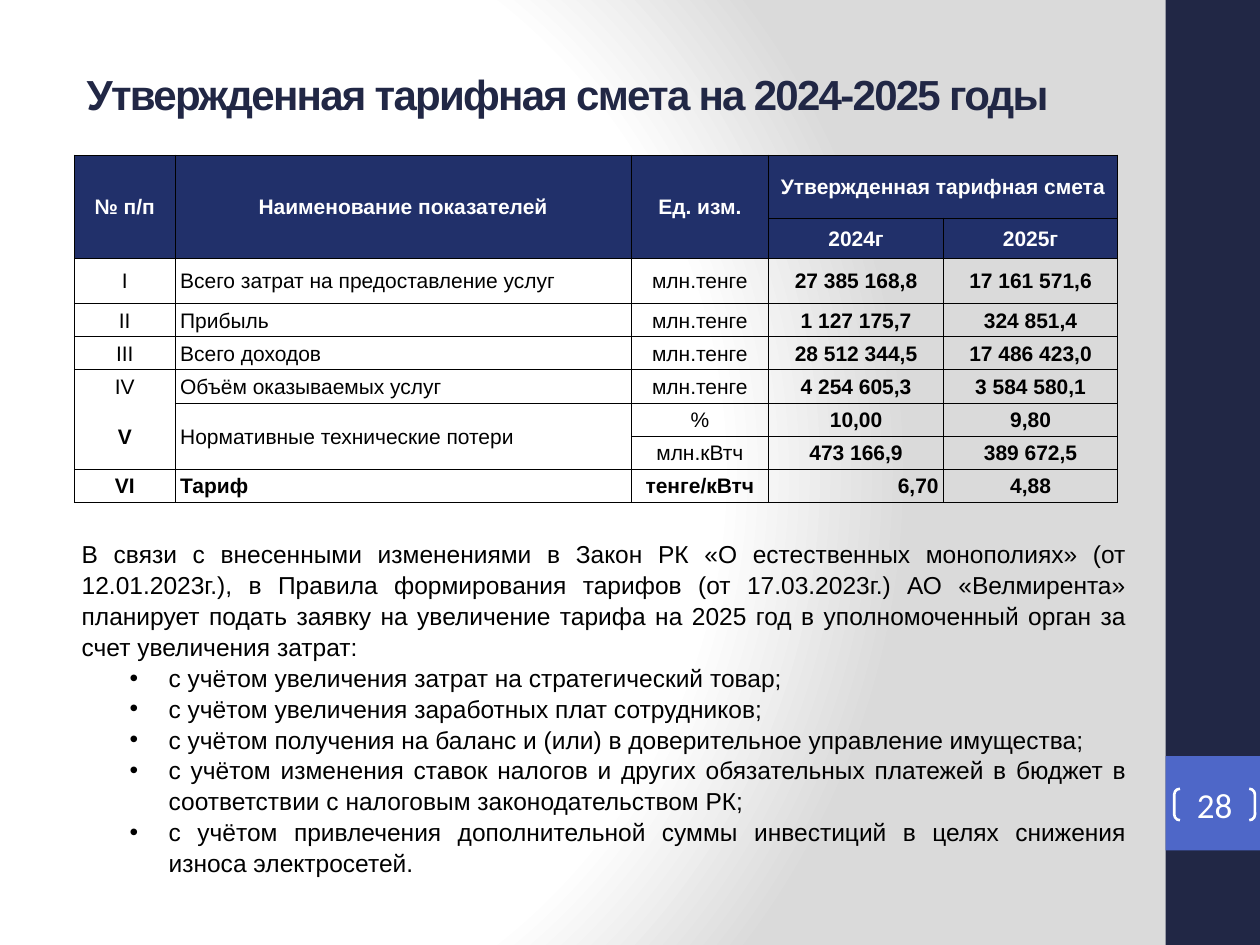
from dataclasses import dataclass

from pptx import Presentation
from pptx import util as u
from pptx.dml.color import RGBColor
from pptx.enum import shapes, text
from pptx.oxml import parse_xml
from pptx.oxml.ns import nsdecls

MID, TOP = text.MSO_ANCHOR.MIDDLE, text.MSO_ANCHOR.TOP
LEFT, RIGHT = text.PP_ALIGN.LEFT, text.PP_ALIGN.RIGHT
MIDST, FULL = text.PP_ALIGN.CENTER, text.PP_ALIGN.JUSTIFY


@dataclass(frozen=True)
class Theme:
    font: str = "Arial"
    page_font: str = "Calibri"
    navy: str = "212745"
    blue: str = "4E67C8"
    head: str = "21306A"
    white: str = "FFFFFF"
    black: str = "000000"
    gray: str = "DADADA"
    title: float = 24
    body: float = 14
    cell: float = 12
    page: float = 20
    rule: float = 0.5


@dataclass(frozen=True)
class Box:
    x: float
    y: float
    w: float
    h: float

    def lens(self):
        return [u.Inches(v) for v in (self.x, self.y, self.w, self.h)]


@dataclass(frozen=True)
class Row:
    no: str
    name: str
    unit: str
    old: str
    new: str
    bold: str = "old new"

    def cells(self):
        return [(key, getattr(self, key)) for key in ("no", "name", "unit", "old", "new")]


T = Theme()
COLS = (0.8, 3.62, 1.09, 1.39, 1.38)
HIGH = (0.5, 0.32, 0.36) + (1.58 / 6,) * 6
HEADS = (
    Row("№ п/п", "Наименование показателей", "Ед. изм.", "Утвержденная тарифная смета", ""),
    Row("", "", "", "2024г", "2025г"),
)
ROWS = (
    Row("I", "Всего затрат на предоставление услуг", "млн.тенге", "27 385 168,8", "17 161 571,6"),
    Row("II", "Прибыль", "млн.тенге", "1 127 175,7", "324 851,4"),
    Row("III", "Всего доходов", "млн.тенге", "28 512 344,5", "17 486 423,0"),
    Row("IV", "Объём оказываемых услуг", "млн.тенге", "4 254 605,3", "3 584 580,1"),
    Row("V", "Нормативные технические потери", "%", "10,00", "9,80", "no old new"),
    Row("", "", "млн.кВтч", "473 166,9", "389 672,5"),
    Row("VI", "Тариф", "тенге/кВтч", "6,70", "4,88", "no name unit old new"),
)
SPANS = (((0, 0), (1, 0)), ((0, 1), (1, 1)), ((0, 2), (1, 2)), ((0, 3), (0, 4)),
         ((6, 0), (7, 0)), ((6, 1), (7, 1)))
OPEN = {(5, 0, "B"), (6, 0, "T")}
INTRO = ("В связи с внесенными изменениями в Закон РК «О естественных монополиях» "
         "(от 12.01.2023г.), в Правила формирования тарифов (от 17.03.2023г.) "
         "АО «Велмирента» планирует подать заявку на увеличение тарифа на 2025 год "
         "в уполномоченный орган за счет увеличения затрат:")
CAUSES = (
    "с учётом увеличения затрат на стратегический товар;",
    "с учётом увеличения заработных плат сотрудников;",
    "с учётом получения на баланс и (или) в доверительное управление имущества;",
    "с учётом изменения ставок налогов и других обязательных платежей в бюджет "
    "в соответствии с налоговым законодательством РК;",
    "с учётом привлечения дополнительной суммы инвестиций в целях снижения износа электросетей.",
)


def add_run(para, words: str, size: float, color: str, bold=False, font=T.font):
    run = para.add_run()
    run.text = words
    run.font.name, run.font.size, run.font.bold = font, u.Pt(size), bold
    run.font.color.rgb = RGBColor.from_string(color)
    return run


def add_back(slide) -> None:
    stops = "".join(
        f'<a:gs pos="{pos * 1000}"><a:srgbClr val="{color}"/></a:gs>'
        for pos, color in ((0, T.white), (75, T.white), (100, T.gray)))
    slide.element.cSld.insert(0, parse_xml(
        f'<p:bg {nsdecls("p", "a")}><p:bgPr><a:gradFill rotWithShape="1">'
        f'<a:gsLst>{stops}</a:gsLst><a:path path="circle">'
        '<a:fillToRect l="20000" t="50000" r="100000" b="50000"/></a:path>'
        '</a:gradFill><a:effectLst/></p:bgPr></p:bg>'))


def add_block(slide, box: Box, color: str) -> None:
    block = slide.shapes.add_shape(shapes.MSO_SHAPE.RECTANGLE, *box.lens())
    block.shadow.inherit = False
    block.fill.solid()
    block.fill.fore_color.rgb = RGBColor.from_string(color)
    block.line.fill.background()


def add_page(slide, box: Box, num: str) -> None:
    pair = slide.shapes.add_shape(shapes.MSO_SHAPE.DOUBLE_BRACKET, *box.lens())
    pair.shadow.inherit = False
    pair.adjustments[0] = 0.18
    pair.fill.background()
    pair.line.color.rgb = RGBColor.from_string(T.white)
    pair.line.width = u.Pt(1.5)
    frame = pair.text_frame
    frame.margin_left = frame.margin_right = frame.margin_top = frame.margin_bottom = 0
    frame.vertical_anchor = MID
    frame.paragraphs[0].alignment = MIDST
    add_run(frame.paragraphs[0], num, T.page, T.white, font=T.page_font)


def add_frame(slide, box: Box, anchor):
    frame = slide.shapes.add_textbox(*box.lens()).text_frame
    frame.word_wrap, frame.vertical_anchor = True, anchor
    return frame


def add_title(slide, box: Box, words: str) -> None:
    para = add_frame(slide, box, MID).paragraphs[0]
    run = add_run(para, words, T.title, T.navy, True)
    run.font._element.set("spc", "-100")


def add_notes(slide, box: Box) -> None:
    frame = add_frame(slide, box, TOP)
    frame.auto_size = text.MSO_AUTO_SIZE.SHAPE_TO_FIT_TEXT
    for i, words in enumerate((INTRO, *CAUSES)):
        para = frame.add_paragraph() if i else frame.paragraphs[0]
        para.alignment, para.line_spacing = FULL, 1.05
        props = para._p.get_or_add_pPr()
        props.set("marL", str(u.Inches(0.81 if i else 0.12)))
        props.set("indent", str(u.Inches(-0.31 if i else 0)))
        if i:
            para.level = 1
            props.append(parse_xml(f'<a:buFont {nsdecls("a")} typeface="{T.font}"/>'))
            props.append(parse_xml(f'<a:buChar {nsdecls("a")} char="•"/>'))
        add_run(para, words, T.body, T.black)


def add_rules(cell, r: int, c: int) -> None:
    props = cell._tc.get_or_add_tcPr()
    for i, side in enumerate("LRTB"):
        paint = ("<a:noFill/>" if (r, c, side) in OPEN else
                 f'<a:solidFill><a:srgbClr val="{T.black}"/></a:solidFill>')
        props.insert(i, parse_xml(
            f'<a:ln{side} {nsdecls("a")} w="{u.Pt(T.rule)}">{paint}</a:ln{side}>'))


def fill_cell(cell, words: str, side, color: str, bold: bool) -> None:
    cell.vertical_anchor = MID
    cell.margin_left = u.Inches(0.04 if side == LEFT else 0.01)
    cell.margin_right = u.Inches(0.04 if side == RIGHT else 0.01)
    cell.margin_top, cell.margin_bottom = u.Inches(0.01), 0
    para = cell.text_frame.paragraphs[0]
    para.alignment = side
    if words:
        add_run(para, words, T.cell, color, bold)
    else:
        para.font.size = u.Pt(T.cell)


def add_grid(slide, box: Box) -> None:
    grid = slide.shapes.add_table(len(HIGH), len(COLS), *box.lens()).table
    grid.first_row = grid.horz_banding = False
    for col, wide in zip(grid.columns, COLS):
        col.width = u.Inches(wide)
    for row, high in zip(grid.rows, HIGH):
        row.height = u.Inches(high)
    for r, row in enumerate(HEADS + ROWS):
        head = r < len(HEADS)
        for c, (key, words) in enumerate(row.cells()):
            cell = grid.cell(r, c)
            side = LEFT if key == "name" and not head else MIDST
            if words == "6,70":
                side = RIGHT
            fill_cell(cell, words, side, T.white if head else T.black,
                      head or key in row.bold.split())
            if head:
                cell.fill.solid()
                cell.fill.fore_color.rgb = RGBColor.from_string(T.head)
            else:
                cell.fill.background()
            add_rules(cell, r, c)
    for first, last in SPANS:
        grid.cell(*first).merge(grid.cell(*last))


def main() -> None:
    deck = Presentation()
    deck.slide_width, deck.slide_height = u.Inches(10), u.Inches(7.5)
    slide = deck.slides.add_slide(deck.slide_layouts[6])
    add_back(slide)
    add_block(slide, Box(9.25, 0, 0.75, 7.5), T.navy)
    add_block(slide, Box(9.25, 6, 0.75, 0.75), T.blue)
    add_page(slide, Box(9.32, 6.26, 0.64, 0.25), "28")
    add_title(slide, Box(0.59, 0.52, 8.03, 0.44), "Утвержденная тарифная смета на 2024-2025 годы")
    add_grid(slide, Box(0.59, 1.23, 8.27, 2.76))
    add_notes(slide, Box(0.43, 4.22, 8.61, 2.98))
    deck.save("out.pptx")


if __name__ == "__main__":
    main()
